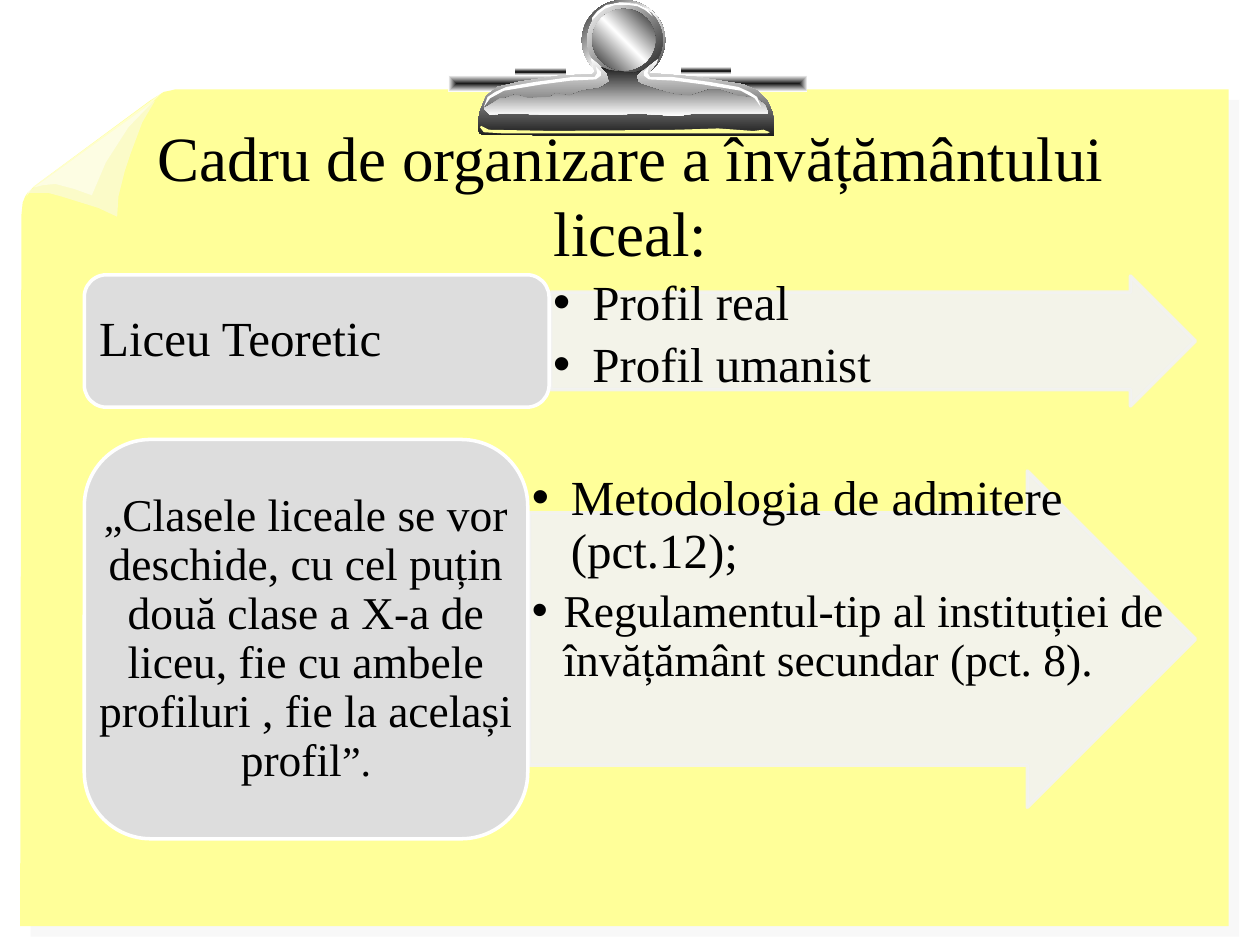
from dataclasses import dataclass

from pptx import Presentation
from pptx.dml.color import RGBColor
from pptx.enum.shapes import MSO_SHAPE
from pptx.enum.text import MSO_ANCHOR, MSO_AUTO_SIZE, PP_ALIGN
from pptx.oxml import parse_xml
from pptx.oxml.ns import nsdecls, qn
from pptx.util import Cm, Pt

RECT, OVAL = MSO_SHAPE.RECTANGLE, MSO_SHAPE.OVAL
ROUND, ARROW = MSO_SHAPE.ROUNDED_RECTANGLE, MSO_SHAPE.RIGHT_ARROW
MIDDLE, TOP = MSO_ANCHOR.MIDDLE, MSO_ANCHOR.TOP
LEFT, CENTER = PP_ALIGN.LEFT, PP_ALIGN.CENTER
FIXED = MSO_AUTO_SIZE.NONE


@dataclass(frozen=True)
class Theme:
    font: str = "Times New Roman"
    text: str = "000000"
    note: str = "FFFF99"
    shade: str = "F8F8F8"
    white: str = "FFFFFF"
    dark: str = "1C1C1C"
    arrow: str = "F2F2F2"
    box: str = "DDDDDD"
    title: int = 36
    large: int = 28
    body: int = 26
    quote: int = 24


T = Theme()
UNIT = Cm(2.54) / 100  # outline points are hundredths of an inch
EDGE = 24.1  # right end of both arrows, cm

# Outlines of the note and the clip
NOTE = [(135, 72), (139, 71), (975, 71), (975, 735), (16, 735), (17, 171),
        (18, 161), (20, 156), (22, 153), (27, 148), (119, 80), (130, 73)]
FOLD = [(49, 156), (78, 165), (93, 172), (94, 156), (99, 136), (104, 121),
        (113, 97), (123, 80), (27, 149), (22, 153), (38, 153)]
CURL = [(21, 156), (23, 151), (31, 145), (128, 74), (102, 101), (84, 129),
        (73, 155), (59, 150), (44, 146), (34, 147), (26, 149)]
SHINE = [(518, 13), (514, 7), (505, 3), (492, 2), (481, 4), (474, 9),
         (470, 14), (470, 16), (475, 11), (480, 7), (488, 4), (499, 4),
         (506, 5), (512, 8)]
BODY = [(381, 106), (384, 107), (614, 108), (614, 95), (613, 89), (609, 80),
        (601, 72), (590, 67), (577, 65), (552, 61), (515, 58), (521, 50),
        (522, 47), (511, 56), (503, 59), (485, 59), (478, 54), (469, 46),
        (472, 57), (470, 59), (445, 60), (412, 65), (395, 69), (386, 76),
        (381, 88), (379, 98), (379, 102)]
INNER = [(401, 78), (397, 78), (391, 82), (384, 86), (389, 91), (401, 90),
         (440, 91), (489, 91), (506, 90), (538, 92), (551, 90), (610, 90),
         (607, 83), (600, 78), (585, 76), (571, 71), (563, 71), (548, 76),
         (536, 75), (521, 71), (509, 67), (506, 65), (505, 60), (509, 56),
         (503, 58), (484, 56), (477, 53), (482, 58), (484, 65), (476, 70),
         (462, 72), (452, 76), (441, 74), (437, 77), (419, 78), (409, 75)]
RIDGE = [(384, 85), (387, 77), (393, 73), (402, 69), (425, 65), (455, 61),
         (472, 61), (474, 58), (473, 53), (477, 57), (477, 60), (473, 63),
         (453, 64), (430, 67), (400, 72), (389, 78)]
LIP = [(382, 100), (381, 101), (384, 105), (401, 106), (609, 106), (611, 105),
       (606, 103), (598, 104), (570, 102), (538, 103), (440, 104), (388, 103)]


def rgb(code):
    return RGBColor.from_string(code)


def paint(shape, code, edge=None, alpha=100):
    """Flat fill, optional 2 pt edge, optional opacity in percent."""
    shape.shadow.inherit = False
    shape.fill.solid()
    shape.fill.fore_color.rgb = rgb(code)
    if edge:
        shape.line.color.rgb = rgb(edge)
        shape.line.width = Pt(2)
    else:
        shape.line.fill.background()
    if alpha < 100:
        for color in shape._element.spPr.iter(qn("a:srgbClr")):
            color.append(parse_xml(
                f'<a:alpha {nsdecls("a")} val="{alpha * 1000}"/>'))


def blend(shape, codes, angle=None):
    """Evenly spaced gradient, linear or, with no angle, from the centre."""
    paint(shape, codes[0])
    gap = 100000 // (len(codes) - 1)
    stops = "".join(f'<a:gs pos="{i * gap}"><a:srgbClr val="{code}"/></a:gs>'
                    for i, code in enumerate(codes))
    if angle is None:
        way = ('<a:path path="shape"><a:fillToRect l="50000" t="50000" '
               'r="50000" b="50000"/></a:path>')
    else:
        way = f'<a:lin ang="{angle * 60000}" scaled="0"/>'
    props = shape._element.spPr
    props.replace(props.find(qn("a:solidFill")), parse_xml(
        f'<a:gradFill {nsdecls("a")} rotWithShape="1">'
        f'<a:gsLst>{stops}</a:gsLst>{way}</a:gradFill>'))


def add(slide, kind, area):
    return slide.shapes.add_shape(kind, *map(Cm, area))


def trace(slide, points):
    pen = slide.shapes.build_freeform(*points[0], scale=UNIT)
    pen.add_line_segments(points[1:], close=True)
    return pen.convert_to_shape()


def frame(shape, anchor, pad_x, pad_y):
    box = shape.text_frame
    box.word_wrap, box.auto_size = True, FIXED
    box.vertical_anchor = anchor
    box.margin_left = box.margin_right = Cm(pad_x)
    box.margin_top = box.margin_bottom = Cm(pad_y)
    return box


def style(para, size, align=LEFT, lines=0.9):
    para.alignment, para.line_spacing = align, lines
    para.space_before = Pt(0)
    font = para.font
    font.name, font.size, font.color.rgb = T.font, Pt(size), rgb(T.text)


def place(slide, holder, area):
    """Move a placeholder and bring it to the front."""
    holder.left, holder.top, holder.width, holder.height = map(Cm, area)
    slide.shapes._spTree.append(holder._element)


def draw_note(slide):
    note = trace(slide, NOTE)
    paint(note, T.note)
    note._element.spPr.find(qn("a:effectLst")).append(parse_xml(
        f'<a:outerShdw {nsdecls("a")} blurRad="0" dist="{Pt(8.5)}" '
        f'dir="2700000"><a:srgbClr val="{T.shade}"/></a:outerShdw>'))
    paint(trace(slide, FOLD), T.shade, alpha=50)
    paint(trace(slide, CURL), T.white, alpha=50)


def draw_clip(slide):
    dark, white = T.dark, T.white
    blend(add(slide, RECT, (9.04, 1.52, 7.24, 0.33)), [dark, white])
    for x, y in ((10.39, 1.37), (13.72, 1.35)):
        blend(add(slide, RECT, (x, y, 1.02, 0.15)), [white, dark, white], 90)
    blend(add(slide, OVAL, (11.73, 0, 1.68, 1.63)), [dark, white, dark], 45)
    blend(add(slide, OVAL, (11.84, 0.05, 1.52, 1.52)), [white, dark], 45)
    paint(trace(slide, SHINE), white)
    blend(add(slide, OVAL, (11.94, 0.18, 1.27, 1.24)), [dark, white, dark], 315)
    blend(trace(slide, BODY), [white, dark], 90)
    paint(trace(slide, LIP), T.note)
    blend(trace(slide, INNER), [dark, white], 90)
    for ridge in (RIDGE, [(988 - x, y) for x, y in RIDGE]):
        paint(trace(slide, ridge), white)


def draw_row(slide, holder, box, tall, label, items):
    """A rounded label box and the arrow with its list."""
    x, y, w, h = box
    start = x + w + 0.03
    area = (start, y + (h - tall) / 2, EDGE - start, tall)
    arrow = add(slide, ARROW, area)
    arrow.adjustments[0], arrow.adjustments[1] = 0.75, 0.5
    paint(arrow, T.arrow, T.arrow, 90)
    place(slide, holder, area)
    body = frame(holder, TOP, 0.05, 0.05)
    for i, (text, size, indent) in enumerate(items):
        para = body.add_paragraph() if i else body.paragraphs[0]
        para.text = text
        props = para._p.get_or_add_pPr()
        props.set("marL", str(Cm(indent)))
        props.set("indent", str(-Cm(indent)))
        style(para, size)
        para.space_after = Pt(5)
    paint(add(slide, ROUND, box), T.box, T.white)
    runs, size, align, pad = label
    text = slide.shapes.add_textbox(*map(Cm, box))
    para = frame(text, MIDDLE, pad, 0.13).paragraphs[0]
    style(para, size, align)
    for words, special in runs:
        run = para.add_run()
        run.text = words
        if special:
            run.font.size = Pt(special)


def main():
    deck = Presentation()
    deck.slide_width, deck.slide_height = Cm(25.4), Cm(19.05)
    slide = deck.slides.add_slide(deck.slide_layouts[3])
    title, first, second = slide.placeholders

    # Background
    draw_note(slide)
    draw_clip(slide)

    # Title
    place(slide, title, (1.5, 2.51, 22.43, 2.79))
    head = frame(title, MIDDLE, 0.25, 0.13).paragraphs[0]
    head.text = "Cadru de organizare a învățământului liceal:"
    style(head, T.title, CENTER, 1.0)

    # Rows
    draw_row(slide, first, (1.7, 5.54, 9.37, 2.67), 2.62,
             ([("Liceu Teoretic", None)], T.large, LEFT, 0.3),
             [("Profil real", T.large, 0.79),
              ("Profil umanist", T.large, 0.79)])
    quote = [("„", T.quote),
             ("Clasele liceale se vor deschide, cu cel puțin două clase a X-a "
              "de liceu, fie cu ambele profiluri , fie la același profil", None),
             ("”.", T.quote)]
    draw_row(slide, second, (1.7, 8.86, 8.94, 8.05), 6.78,
             (quote, T.body, CENTER, 0.25),
             [("Metodologia de admitere (pct.12);", T.large, 0.79),
              ("Regulamentul-tip al instituției de învățământ secundar "
               "(pct. 8).", T.body, 0.64)])
    deck.save("out.pptx")


if __name__ == "__main__":
    main()
